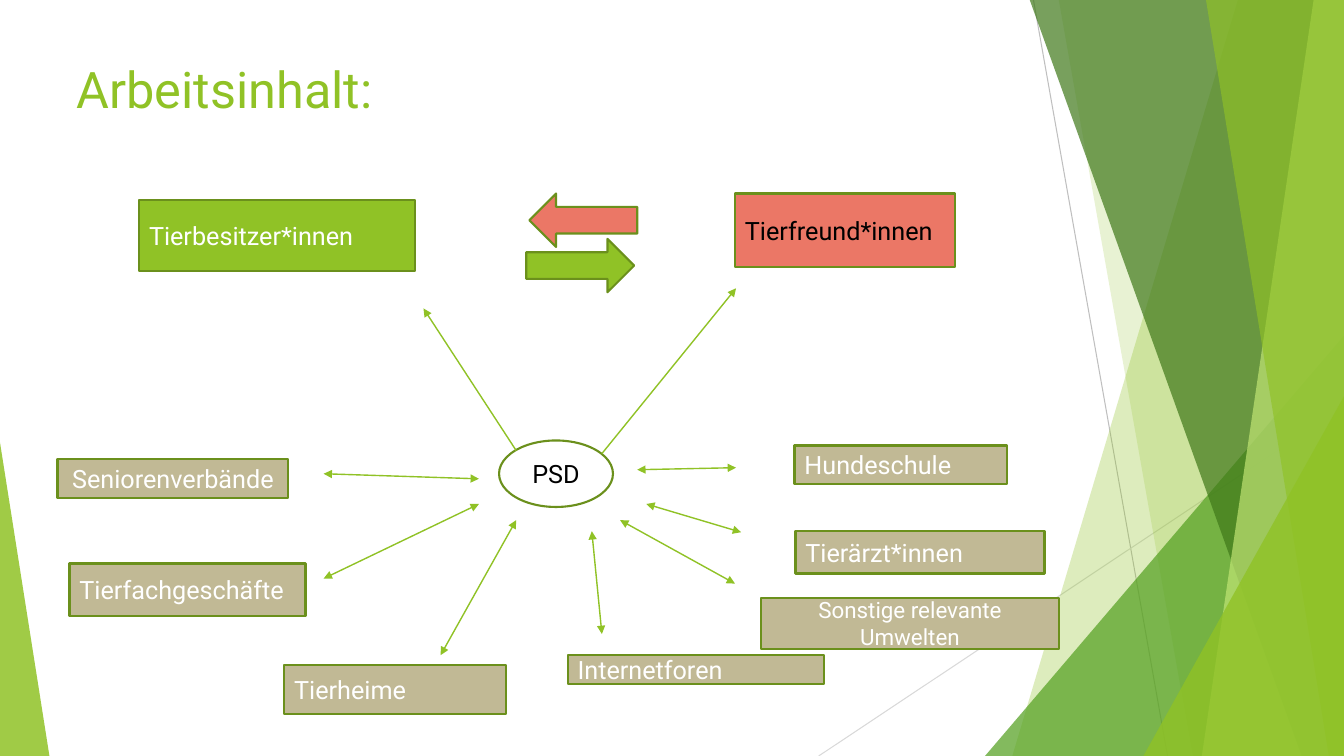
from dataclasses import dataclass

from lxml import etree
from pptx import Presentation
from pptx import util as u
from pptx.dml.color import RGBColor
from pptx.enum import shapes, text
from pptx.oxml.ns import qn


@dataclass(frozen=True)
class Theme:
    font: str = "Roboto"
    green: str = "90C226"
    outline: str = "6B901C"
    coral: str = "EB7766"
    sand: str = "C1B995"
    mid_green: str = "54A021"
    dark_green: str = "3F7819"
    pale_green: str = "C0E474"
    white: str = "FFFFFF"
    black: str = "000000"
    title_size: int = 36
    body_size: int = 18
    small_size: int = 16


theme = Theme()
SHAPE = shapes.MSO_SHAPE
LEFT, CENTER = text.PP_ALIGN.LEFT, text.PP_ALIGN.CENTER


def paint(shape, fill, opacity=None):
    """Fill a shape: outlined when opaque, without a line when translucent."""
    shape.shadow.inherit = False
    shape.fill.solid()
    shape.fill.fore_color.rgb = RGBColor.from_string(fill)
    if opacity is None:
        shape.line.color.rgb = RGBColor.from_string(theme.outline)
        shape.line.width = u.Pt(1.5)
    else:
        shape.line.fill.background()
        color = shape._element.spPr.find(qn("a:solidFill"))[0]
        etree.SubElement(color, qn("a:alpha"), val=str(opacity * 1000))


def connect(start, end, color, width, heads=()):
    line = page.shapes.add_connector(
        shapes.MSO_CONNECTOR.STRAIGHT, *map(u.Inches, start + end))
    line.line.color.rgb = RGBColor.from_string(color)
    line.line.width = u.Pt(width)
    for head in heads:
        etree.SubElement(line.line._get_or_add_ln(), qn(head), type="triangle")
    etree.SubElement(line._element.spPr, qn("a:effectLst"))


deck = Presentation()
deck.slide_width, deck.slide_height = u.Inches(13.33), u.Inches(7.5)
page = deck.slides.add_slide(deck.slide_layouts[5])

# Title
title = page.shapes.title
title.left, title.top = u.Inches(0.66), u.Inches(0.53)
title.width, title.height = u.Inches(9.4), u.Inches(1.44)
title.text_frame.text = "Arbeitsinhalt:"
title.text_frame.vertical_anchor = text.MSO_ANCHOR.TOP
para = title.text_frame.paragraphs[0]
para.alignment = LEFT
font = para.runs[0].font
font.name, font.size = theme.font, u.Pt(theme.title_size)
font.color.rgb = RGBColor.from_string(theme.green)

# Background facets: top-left and bottom-left x of bands reaching the right
# edge, or the box and apex position of triangles
connect((10.25, 0), (11.58, 7.5), "BFBFBF", 0.75)
connect((13.33, 4.03), (8.12, 7.5), "D9D9D9", 0.75)
facets = [
    ((12.28, 10.04), None, theme.green, 30),
    ((10.5, 11.83), None, theme.green, 20),
    ((9.77, 3.33, 3.56, 4.17), 1, theme.mid_green, 72),
    ((10.21, 12.91), None, theme.dark_green, 70),
    ((13.03, 11.92), None, theme.pale_green, 70),
    ((11.96, 13.18), None, theme.green, 65),
    ((11.34, 3.93, 1.99, 3.57), 1, theme.green, 80),
    ((0, 4.39, 0.49, 3.11), 0, theme.green, 85),
]
for place, apex, color, opacity in facets:
    if apex is None:
        top_x, bottom_x = place
        outline = [(u.Inches(x), u.Inches(y)) for x, y in (
            (top_x, -0.01), (13.33, -0.01), (13.33, 7.5), (bottom_x, 7.5))]
        builder = page.shapes.build_freeform(*outline[0])
        builder.add_line_segments(outline[1:], close=True)
        facet = builder.convert_to_shape()
    else:
        facet = page.shapes.add_shape(
            SHAPE.ISOSCELES_TRIANGLE, *map(u.Inches, place))
        facet.adjustments[0] = apex
    paint(facet, color, opacity)

# Labelled nodes
sand_node = (SHAPE.RECTANGLE, theme.sand, theme.white, theme.body_size)
nodes = [
    ("PSD", (4.95, 4.37, 1.13, 0.66), CENTER,
     (SHAPE.OVAL, theme.white, theme.black, theme.body_size)),
    ("Tierfreund*innen", (7.29, 1.92, 2.18, 0.73), LEFT,
     (SHAPE.RECTANGLE, theme.coral, theme.black, theme.body_size)),
    ("Tierbesitzer*innen", (1.38, 1.98, 2.74, 0.71), LEFT,
     (SHAPE.RECTANGLE, theme.green, theme.white, theme.body_size)),
    ("Hundeschule", (7.88, 4.42, 2.11, 0.38), LEFT, sand_node),
    ("Tierärzt*innen", (7.89, 5.27, 2.47, 0.42), LEFT, sand_node),
    ("Internetforen", (5.63, 6.5, 2.54, 0.29), LEFT, sand_node),
    ("Tierheime", (2.82, 6.6, 2.2, 0.48), LEFT, sand_node),
    ("Tierfachgeschäfte", (0.69, 5.59, 2.34, 0.52), LEFT, sand_node),
    ("Seniorenverbände", (0.57, 4.55, 2.29, 0.39), CENTER, sand_node),
    ("Sonstige relevante Umwelten", (7.55, 5.93, 2.95, 0.51), CENTER,
     (SHAPE.RECTANGLE, theme.sand, theme.white, theme.small_size)),
]
for label, place, alignment, (kind, fill, color, size) in nodes:
    box = page.shapes.add_shape(kind, *map(u.Inches, place))
    paint(box, fill)
    box.text_frame.text = label
    box.text_frame.word_wrap = True
    box.text_frame.vertical_anchor = text.MSO_ANCHOR.MIDDLE
    para = box.text_frame.paragraphs[0]
    para.alignment = alignment
    font = para.runs[0].font
    font.name, font.size = theme.font, u.Pt(size)
    font.color.rgb = RGBColor.from_string(color)

# Exchange between owners and friends
for kind, place, rotation, fill in [
    (SHAPE.RIGHT_ARROW, (5.22, 2.37, 1.07, 0.53), 0, theme.green),
    (SHAPE.DOWN_ARROW, (5.52, 1.65, 0.53, 1.07), 90, theme.coral),
]:
    arrow = page.shapes.add_shape(kind, *map(u.Inches, place))
    arrow.rotation = rotation
    paint(arrow, fill)

# One-way links from PSD, then two-way links to its surroundings
one_way = [((5.97, 4.5), (7.3, 2.86)), ((5.12, 4.47), (4.2, 3.06))]
two_way = [
    ((7.3, 4.64), (6.32, 4.66)),
    ((7.35, 5.28), (6.41, 5)),
    ((7.29, 5.79), (6.15, 5.16)),
    ((5.97, 6.29), (5.87, 5.27)),
    ((4.37, 6.5), (5.12, 5.16)),
    ((3.21, 5.74), (4.75, 5)),
    ((4.75, 4.75), (3.21, 4.7)),
]
for links, heads in [(one_way, ["a:tailEnd"]),
                     (two_way, ["a:headEnd", "a:tailEnd"])]:
    for start, end in links:
        connect(start, end, theme.green, 1, heads)

deck.save("out.pptx")
